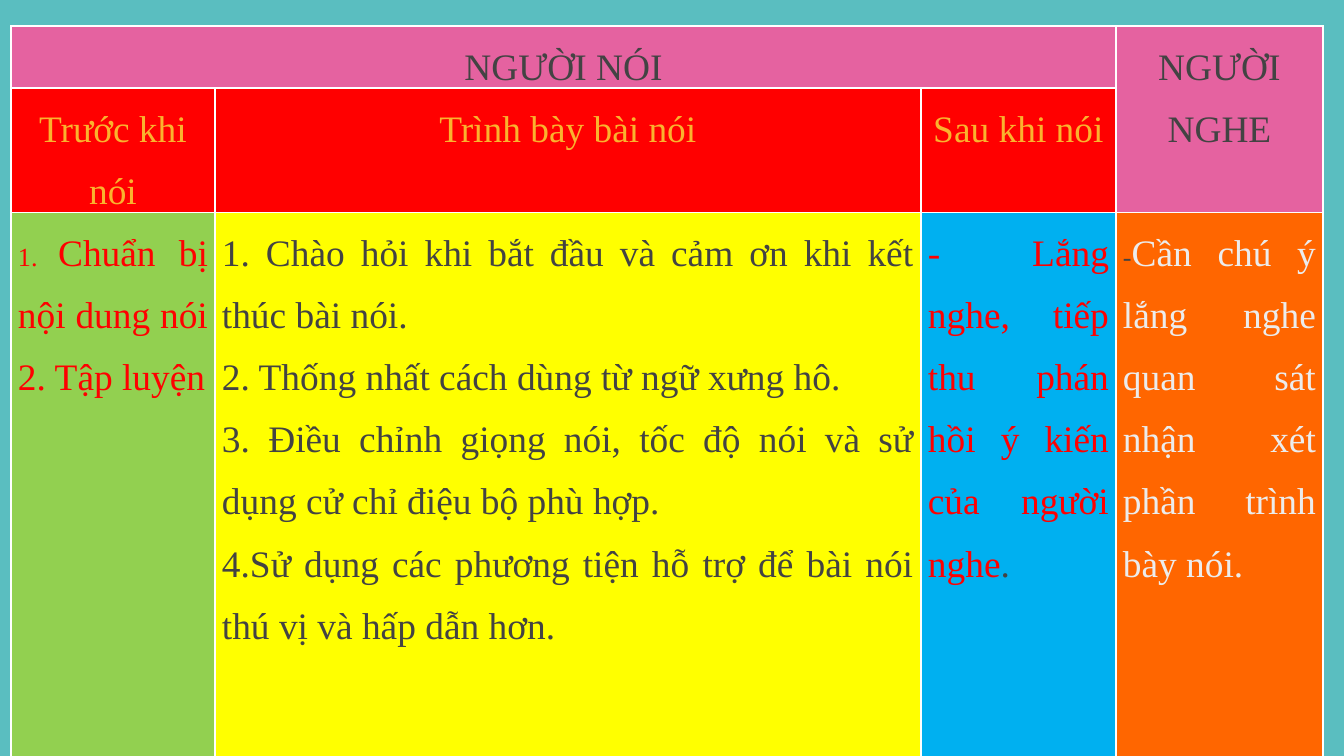
from lxml import etree
from pptx import Presentation
from pptx.dml.color import RGBColor
from pptx.enum.text import MSO_ANCHOR, PP_ALIGN
from pptx.oxml.ns import qn
from pptx.util import Emu, Pt

CENTER, JUSTIFY = PP_ALIGN.CENTER, PP_ALIGN.JUSTIFY
TOP = MSO_ANCHOR.TOP

EMU_PER_PX = 914400 / 134.4
FONT = "Times New Roman"
BODY_SIZE, SMALL_SIZE = 20, 14

TEAL = RGBColor(0x5A, 0xBE, 0xC0)
WHITE = RGBColor(0xFF, 0xFF, 0xFF)
PINK = RGBColor(0xE5, 0x62, 0xA0)
RED = RGBColor(0xFF, 0x00, 0x00)
GREEN = RGBColor(0x92, 0xD0, 0x50)
YELLOW = RGBColor(0xFF, 0xFF, 0x00)
BLUE = RGBColor(0x00, 0xB0, 0xF0)
ORANGE = RGBColor(0xFF, 0x66, 0x00)
GOLD = RGBColor(0xFA, 0xB3, 0x2E)
DARK = RGBColor(0x43, 0x43, 0x43)
PALE = RGBColor(0xEC, 0xEC, 0xEC)

COLUMN_WIDTHS = [204, 706, 195, 207]
ROW_HEIGHTS = [43, 43, 650]

SPEAKER_STAGES = ["Trước khi nói", "Trình bày bài nói", "Sau khi nói"]
PRESENTING_STEPS = [
    "1. Chào hỏi khi bắt đầu và cảm ơn khi kết thúc bài nói.",
    "2. Thống nhất cách dùng từ ngữ xưng hô.",
    "3. Điều chỉnh giọng nói, tốc độ nói và sử dụng cử chỉ điệu bộ phù hợp.",
    "4.Sử dụng các phương tiện hỗ trợ để bài nói thú vị và hấp dẫn hơn.",
]
GUIDANCE = [
    (GREEN, [
        [("1. ", RED, SMALL_SIZE), ("Chuẩn bị nội dung nói ", RED, BODY_SIZE)],
        [("2. Tập luyện", RED, BODY_SIZE)],
    ]),
    (YELLOW, [[(step, DARK, BODY_SIZE)] for step in PRESENTING_STEPS]),
    (BLUE, [[
        ("- Lắng nghe, tiếp thu phán hồi ý kiến của người nghe", RED, BODY_SIZE),
        (".", DARK, BODY_SIZE),
    ]]),
    (ORANGE, [[
        ("-", DARK, SMALL_SIZE),
        ("Cần chú ý lắng nghe quan sát nhận xét phần trình bày nói.", PALE, BODY_SIZE),
    ]]),
]


def px(value):
    return Emu(round(value * EMU_PER_PX))


def add_borders(cell):
    properties = cell._tc.get_or_add_tcPr()
    for side in ("lnL", "lnR", "lnT", "lnB"):
        line = etree.SubElement(properties, qn(f"a:{side}"), w=str(Pt(1)))
        fill = etree.SubElement(line, qn("a:solidFill"))
        etree.SubElement(fill, qn("a:srgbClr"), val=str(WHITE))


def style_cell(cell):
    cell.margin_left = cell.margin_right = px(7)
    cell.margin_top = cell.margin_bottom = 0
    cell.vertical_anchor = TOP
    add_borders(cell)


def write_cell(cell, fill_color, alignment, paragraphs):
    cell.fill.solid()
    cell.fill.fore_color.rgb = fill_color
    frame = cell.text_frame
    for index, runs in enumerate(paragraphs):
        paragraph = frame.add_paragraph() if index else frame.paragraphs[0]
        paragraph.alignment = alignment
        paragraph.line_spacing = 1.5
        for text, color, size in runs:
            run = paragraph.add_run()
            run.text = text
            run.font.name = FONT
            run.font.size = Pt(size)
            run.font.color.rgb = color


def write_heading(cell, text, fill_color, text_color):
    write_cell(cell, fill_color, CENTER, [[(text, text_color, BODY_SIZE)]])


def add_empty_table(slide):
    frame = slide.shapes.add_table(
        len(ROW_HEIGHTS), len(COLUMN_WIDTHS),
        px(11), px(26), px(sum(COLUMN_WIDTHS)), px(sum(ROW_HEIGHTS)))
    table = frame.table
    table.first_row = table.horz_banding = False
    for column, width in zip(table.columns, COLUMN_WIDTHS):
        column.width = px(width)
    for row, height in zip(table.rows, ROW_HEIGHTS):
        row.height = px(height)
    for cell in table.iter_cells():
        style_cell(cell)
    return table


def main():
    presentation = Presentation()
    presentation.slide_width, presentation.slide_height = px(1344), px(756)
    slide = presentation.slides.add_slide(presentation.slide_layouts[6])
    slide.background.fill.solid()
    slide.background.fill.fore_color.rgb = TEAL

    table = add_empty_table(slide)
    table.cell(0, 0).merge(table.cell(0, 2))
    table.cell(0, 3).merge(table.cell(1, 3))
    write_heading(table.cell(0, 0), "NGƯỜI NÓI", PINK, DARK)
    write_heading(table.cell(0, 3), "NGƯỜI NGHE", PINK, DARK)
    for column, stage in enumerate(SPEAKER_STAGES):
        write_heading(table.cell(1, column), stage, RED, GOLD)
    for column, (fill_color, paragraphs) in enumerate(GUIDANCE):
        write_cell(table.cell(2, column), fill_color, JUSTIFY, paragraphs)

    presentation.save("out.pptx")


if __name__ == "__main__":
    main()
